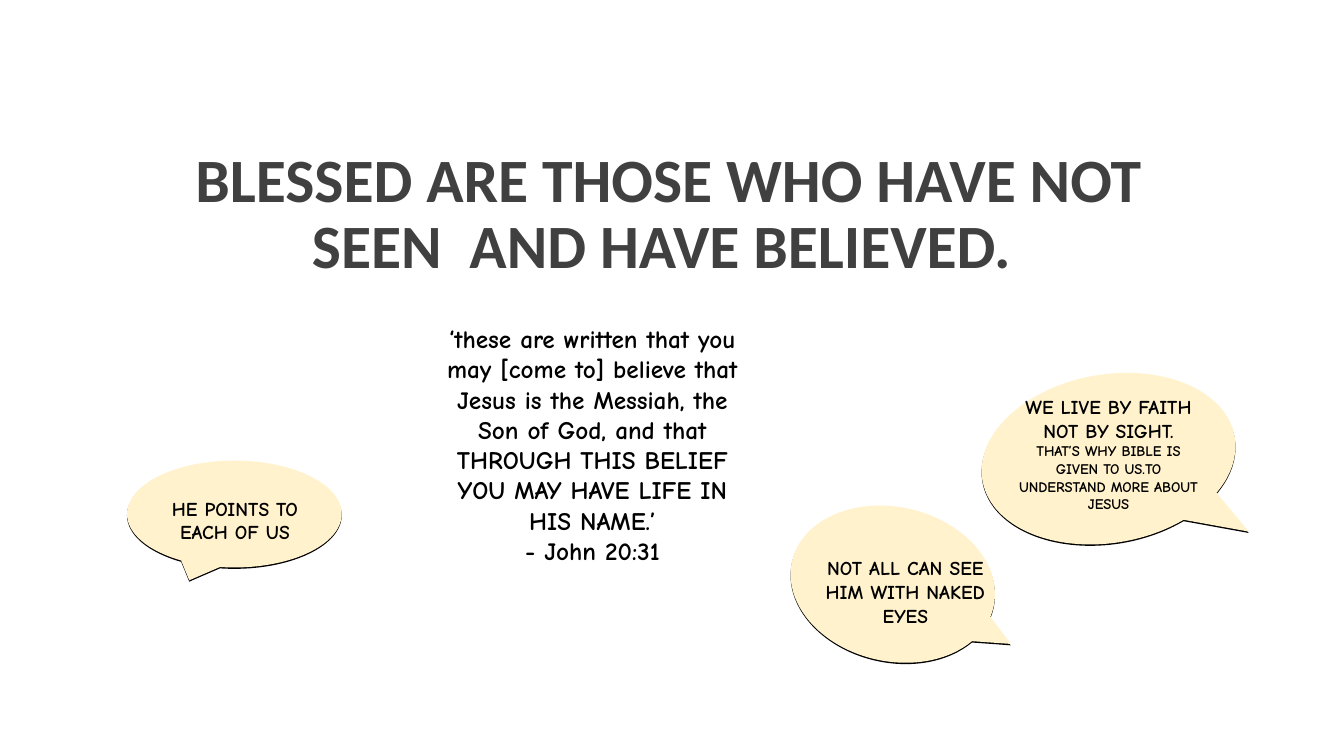
from dataclasses import dataclass
from typing import Any

from lxml.etree import SubElement
from pptx import Presentation
from pptx.dml.color import RGBColor
from pptx.enum.shapes import MSO_SHAPE
from pptx.enum.text import MSO_ANCHOR, MSO_AUTO_SIZE, PP_ALIGN
from pptx.oxml.ns import qn
from pptx.slide import Slide
from pptx.text.text import TextFrame
from pptx.util import Inches, Pt

CREAM = RGBColor(0xFF, 0xF2, 0xCC)
BLACK = RGBColor(0x00, 0x00, 0x00)
CHARCOAL = RGBColor(0x40, 0x40, 0x40)

HEADING_FONT = {"name": "Calibri", "size": Pt(44), "bold": True}
SPEECH_FONT = {"name": "Comic Neue", "bold": True}
HEADING_FRAME = {
    "word_wrap": True,
    "auto_size": MSO_AUTO_SIZE.NONE,
    "vertical_anchor": MSO_ANCHOR.BOTTOM,
}
SPEECH_FRAME = {
    "word_wrap": True,
    "auto_size": MSO_AUTO_SIZE.SHAPE_TO_FIT_TEXT,
    "vertical_anchor": MSO_ANCHOR.TOP,
}
HARD_SHADOW = {
    "blurRad": "0",
    "dist": str(Pt(1)),
    "dir": "5400000",
    "algn": "ctr",
    "rotWithShape": "0",
}


@dataclass(frozen=True)
class Box:
    left: float
    top: float
    width: float
    height: float


@dataclass(frozen=True)
class Line:
    text: str
    size: float


@dataclass(frozen=True)
class Balloon:
    box: Box
    rotation: float = 0
    tail: tuple[float, float] = (-0.21, 0.62)


@dataclass(frozen=True)
class Speech:
    box: Box
    lines: tuple[Line, ...]
    balloon: Balloon | None = None


HEADING = "BLESSED ARE THOSE WHO HAVE NOT SEEN  AND HAVE BELIEVED. "
HEADING_BOX = Box(1.26, 1.67, 10.75, 1.18)

SPEECHES = (
    Speech(
        Box(1.42, 4.88, 1.82, 0.88),
        (Line("HE POINTS TO EACH OF US", 14),),
        Balloon(Box(1.26, 4.57, 2.13, 1.06)),
    ),
    Speech(
        Box(8.07, 5.47, 1.82, 1.11),
        (Line("NOT ALL CAN SEE HIM WITH NAKED EYES", 14),),
        Balloon(Box(8.09, 4.77, 1.53, 2.05), 282.7),
    ),
    Speech(
        Box(9.95, 3.87, 2.09, 1.82),
        (
            Line("WE LIVE BY FAITH NOT BY SIGHT.", 14),
            Line("THAT’S WHY BIBLE IS GIVEN TO US.TO UNDERSTAND MORE ABOUT JESUS", 10.5),
        ),
        Balloon(Box(10.16, 3.28, 1.67, 2.54), 260.1, (-0.57, 0.49)),
    ),
    Speech(
        Box(4.25, 3.16, 3.25, 3.1),
        (
            Line(
                "‘these are written that you may [come to] believe that "
                "Jesus is the Messiah, the Son of God, and that "
                "THROUGH THIS BELIEF YOU MAY HAVE LIFE IN HIS NAME.’",
                18,
            ),
            Line("- John 20:31", 18),
        ),
    ),
)


def apply_format(target: Any, values: dict[str, Any]) -> None:
    for attribute, value in values.items():
        setattr(target, attribute, value)


def lengths(box: Box) -> tuple[int, int, int, int]:
    return Inches(box.left), Inches(box.top), Inches(box.width), Inches(box.height)


def draw_heading(slide: Slide) -> None:
    heading = slide.shapes.title
    heading.left, heading.top, heading.width, heading.height = lengths(HEADING_BOX)
    apply_format(heading.text_frame, HEADING_FRAME)
    sentence = heading.text_frame.paragraphs[0]
    sentence.text = HEADING
    apply_format(sentence, {"alignment": PP_ALIGN.CENTER, "line_spacing": 0.9})
    apply_format(sentence.font, HEADING_FONT)
    sentence.font.color.rgb = CHARCOAL


def draw_balloon(slide: Slide, balloon: Balloon) -> None:
    callout = slide.shapes.add_shape(MSO_SHAPE.OVAL_CALLOUT, *lengths(balloon.box))
    callout.rotation = balloon.rotation
    callout.adjustments[0], callout.adjustments[1] = balloon.tail
    callout.fill.solid()
    callout.fill.fore_color.rgb = CREAM
    callout.line.fill.background()
    callout.shadow.inherit = False
    effects = callout.element.spPr.find(qn("a:effectLst"))
    shadow = SubElement(effects, qn("a:outerShdw"), HARD_SHADOW)
    SubElement(shadow, qn("a:srgbClr"), {"val": str(BLACK)})


def write_lines(frame: TextFrame, lines: tuple[Line, ...]) -> None:
    for index, line in enumerate(lines):
        paragraph = frame.add_paragraph() if index else frame.paragraphs[0]
        paragraph.text = line.text
        paragraph.alignment = PP_ALIGN.CENTER
        apply_format(paragraph.font, SPEECH_FONT | {"size": Pt(line.size)})
        paragraph.font.color.rgb = BLACK


def draw_speech(slide: Slide, speech: Speech) -> None:
    if speech.balloon:
        draw_balloon(slide, speech.balloon)
    words = slide.shapes.add_textbox(*lengths(speech.box)).text_frame
    apply_format(words, SPEECH_FRAME)
    write_lines(words, speech.lines)


def main() -> None:
    deck = Presentation()
    deck.slide_width, deck.slide_height = Inches(13.33), Inches(7.5)
    slide = deck.slides.add_slide(deck.slide_layouts.get_by_name("Title Only"))
    draw_heading(slide)
    for speech in SPEECHES:
        draw_speech(slide, speech)
    deck.save("out.pptx")


if __name__ == "__main__":
    main()
